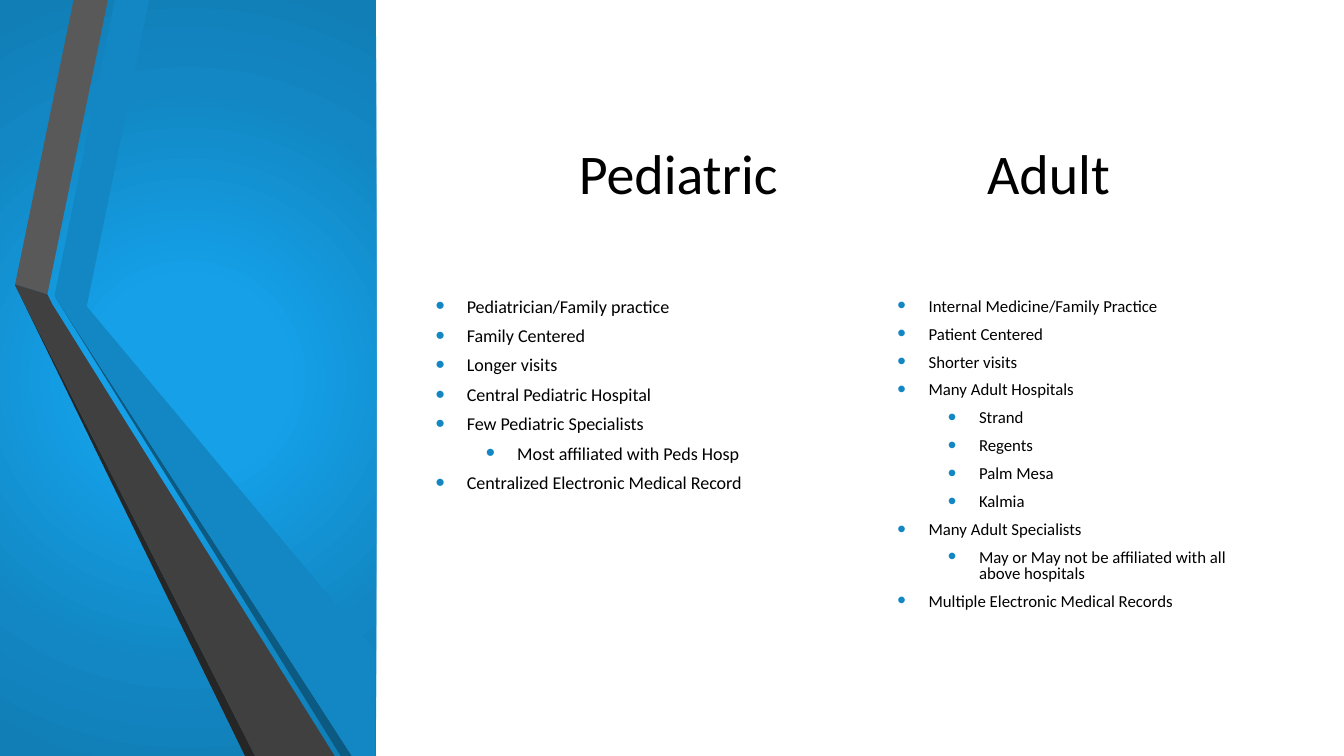
"""Build a slide that compares pediatric and adult care beside a blue folded-ribbon panel."""
from pptx import Presentation
from pptx.dml.color import RGBColor
from pptx.enum.shapes import MSO_SHAPE
from pptx.enum.text import MSO_ANCHOR, MSO_AUTO_SIZE, PP_ALIGN
from pptx.oxml import parse_xml
from pptx.oxml.ns import nsdecls
from pptx.util import Inches, Pt

HEADINGS = ("Pediatric", "Adult")
PEDIATRIC = [
    (0, "Pediatrician/Family practice"),
    (0, "Family Centered"),
    (0, "Longer visits"),
    (0, "Central Pediatric Hospital"),
    (0, "Few Pediatric Specialists"),
    (1, "Most affiliated with Peds Hosp"),
    (0, "Centralized Electronic Medical Record"),
]
ADULT = [
    (0, "Internal Medicine/Family Practice"),
    (0, "Patient Centered"),
    (0, "Shorter visits"),
    (0, "Many Adult Hospitals"),
    (1, "Strand"),
    (1, "Regents"),
    (1, "Palm Mesa"),
    (1, "Kalmia"),
    (0, "Many Adult Specialists"),
    (1, "May or May not be affiliated with all above hospitals"),
    (0, "Multiple Electronic Medical Records"),
]

BLACK = RGBColor(0x00, 0x00, 0x00)
BRIGHT_BLUE = RGBColor(0x15, 0xA0, 0xE8)
BLUE = RGBColor(0x12, 0x87, 0xC3)
EDGE_BLUE = RGBColor(0x11, 0x7E, 0xB6)
DEEP_BLUE = RGBColor(0x0C, 0x5A, 0x82)
GREY = RGBColor(0x59, 0x59, 0x59)
DARK_GREY = RGBColor(0x40, 0x40, 0x40)
SHADE_GREY = RGBColor(0x26, 0x26, 0x26)
FONT = "Calibri"

PANEL_STOPS = [(0, BRIGHT_BLUE), (23, BRIGHT_BLUE), (69, BLUE), (97, EDGE_BLUE)]
HUNDREDTH = Inches(0.01)
RIBBONS = [
    (BLUE, [(54, 294), (86, 304), (148, 0), (114, 0)]),
    (GREY, [(47, 292), (107, 0), (73, 0), (15, 282)]),
    (SHADE_GREY, [(15, 283), (243, 750), (253, 750)]),
    (DEEP_BLUE, [(349, 750), (55, 295), (338, 750)]),
    (BLUE, [(54, 294), (86, 304), (372, 646), (372, 750), (349, 750), (55, 295)]),
    (DARK_GREY, [(332, 750), (52, 302), (47, 292), (15, 282), (15, 283), (253, 750)]),
]

WIDTH, HEIGHT = 13.33, 7.5
PANEL_WIDTH = 0.28 * WIDTH
LEFT, RIGHT = 4.22, 12.58
ADULT_LEFT = 8.8
TITLE_TOP, TITLE_HEIGHT = 0.1 * HEIGHT, 1.92
LIST_TOP, LIST_HEIGHT = 2.92, 3.42
HEADING_INSET, HEADING_STEP = 1.52, 4.05
BULLET_INDENT, LEVEL_STEP = 0.31, 0.5


def place(box, left, top, width, height):
    """Set the position and size of a box in inches."""
    box.left, box.top = Inches(left), Inches(top)
    box.width, box.height = Inches(width), Inches(height)


def style(para, size):
    """Give each run of a paragraph the slide's font."""
    for span in para.runs:
        span.font.name = FONT
        span.font.size = Pt(size)
        span.font.color.rgb = BLACK


def add_panel(page):
    """Draw the blue panel with its radial gradient."""
    panel = page.shapes.add_shape(
        MSO_SHAPE.RECTANGLE, 0, 0, Inches(PANEL_WIDTH), Inches(HEIGHT))
    panel.shadow.inherit = False
    panel.line.fill.background()
    panel.fill.gradient()
    stops = "".join(
        f'<a:gs pos="{share * 1000}"><a:srgbClr val="{color}"/></a:gs>'
        for share, color in PANEL_STOPS)
    gradient = parse_xml(
        f'<a:gradFill {nsdecls("a")} rotWithShape="1"><a:gsLst>{stops}</a:gsLst>'
        '<a:path path="circle"><a:fillToRect l="50000" t="50000" r="50000" b="50000"/>'
        '</a:path></a:gradFill>')
    properties = panel.element.spPr
    properties.replace(properties.find(gradient.tag), gradient)


def add_ribbon(page, color, points):
    """Draw one flat piece of the folded ribbon."""
    builder = page.shapes.build_freeform(*points[0], scale=HUNDREDTH)
    builder.add_line_segments(points[1:], close=True)
    ribbon = builder.convert_to_shape()
    ribbon.shadow.inherit = False
    ribbon.fill.solid()
    ribbon.fill.fore_color.rgb = color
    ribbon.line.fill.background()


def fill_title(box):
    """Write both headings on one line, parted by a tab stop."""
    place(box, LEFT, TITLE_TOP, RIGHT - LEFT, TITLE_HEIGHT)
    frame = box.text_frame
    frame.text = "\t".join(HEADINGS)
    frame.auto_size = MSO_AUTO_SIZE.NONE
    frame.vertical_anchor = MSO_ANCHOR.MIDDLE
    frame.margin_left = Inches(HEADING_INSET)
    para = frame.paragraphs[0]
    para.alignment = PP_ALIGN.LEFT
    style(para, 40)
    para._p.get_or_add_pPr().append(parse_xml(
        f'<a:tabLst {nsdecls("a")}><a:tab pos="{Inches(HEADING_STEP)}" algn="l"/></a:tabLst>'))


def fill_list(box, left, right, items, size):
    """Write a two-level bulleted list."""
    place(box, left, LIST_TOP, right - left, LIST_HEIGHT)
    frame = box.text_frame
    frame.text = "\n".join(text for _, text in items)
    frame.auto_size = MSO_AUTO_SIZE.NONE
    frame.vertical_anchor = MSO_ANCHOR.TOP
    for para, (level, _) in zip(frame.paragraphs, items):
        para.level = level
        para.line_spacing = 0.8
        para.space_before = Pt(0.2 * size)
        para.space_after = Pt(6)
        style(para, size)
        properties = para._p.get_or_add_pPr()
        properties.set("marL", str(Inches(BULLET_INDENT + level * LEVEL_STEP)))
        properties.set("indent", str(-Inches(BULLET_INDENT)))
        for bullet in (f'buClr {nsdecls("a")}><a:srgbClr val="{BLUE}"/></a:buClr>',
                       f'buSzPct {nsdecls("a")} val="145000"/>',
                       f'buFont {nsdecls("a")} typeface="Arial"/>',
                       f'buChar {nsdecls("a")} char="•"/>'):
            properties.append(parse_xml(f"<a:{bullet}"))


def main():
    """Assemble and save the slide."""
    deck = Presentation()
    deck.slide_width, deck.slide_height = Inches(WIDTH), Inches(HEIGHT)
    page = deck.slides.add_slide(deck.slide_layouts.get_by_name("Two Content"))
    title, pediatric, adult = list(page.placeholders)[:3]
    fill_title(title)
    fill_list(pediatric, LEFT, ADULT_LEFT, PEDIATRIC, 12.9)
    fill_list(adult, ADULT_LEFT, RIGHT, ADULT, 12)
    add_panel(page)
    for color, points in RIBBONS:
        add_ribbon(page, color, points)
    deck.save("out.pptx")


if __name__ == "__main__":
    main()
